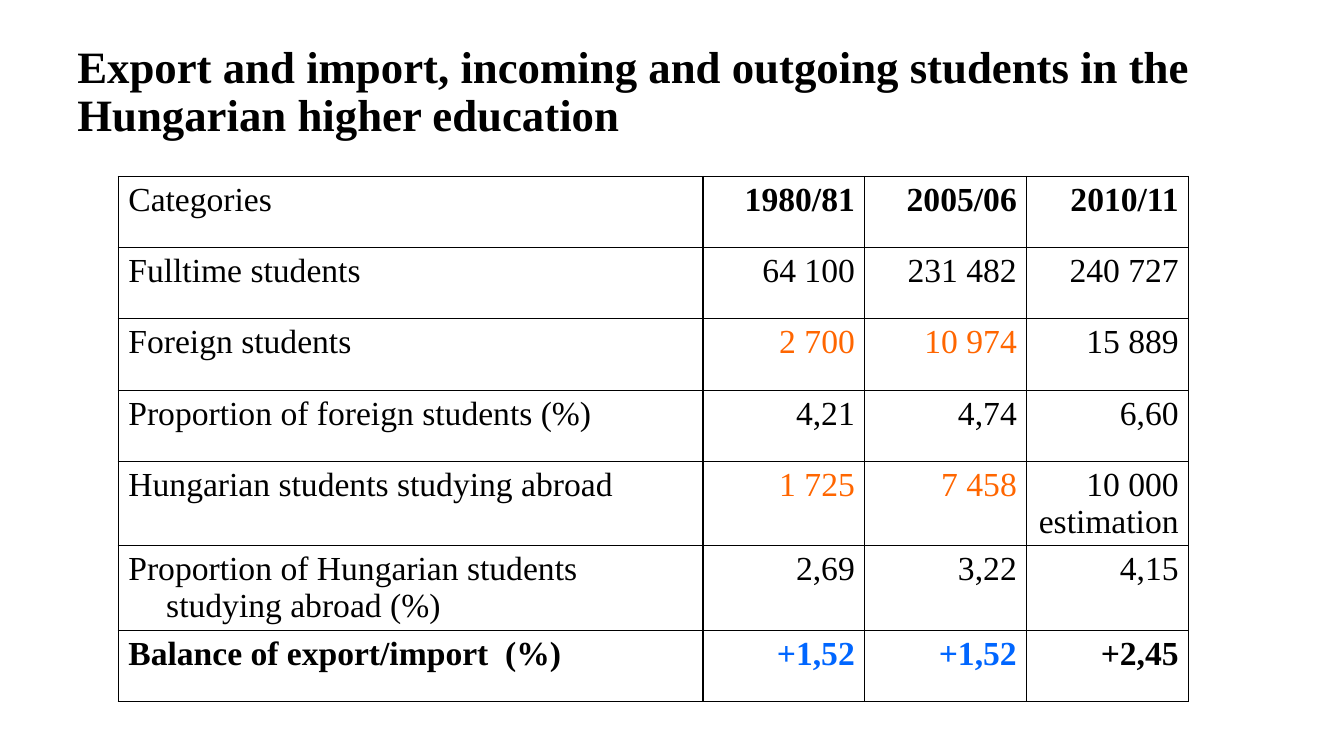
from pptx import Presentation
from pptx.dml.color import RGBColor
from pptx.enum.text import MSO_ANCHOR as Anchor, MSO_AUTO_SIZE as AutoSize, PP_ALIGN as Align
from pptx.oxml.xmlchemy import OxmlElement
from pptx.util import Pt

FONT = "Times New Roman"
BLACK, ORANGE, BLUE = "000000", "FF6600", "0066FF"
TITLE = "Export and import, incoming and outgoing students in the Hungarian higher education"
TITLE_BOX = (48, 21.6, 864, 90)
TABLE_BOX = (84.5, 126, 764.7, 356.3)
LABEL_WIDTH = 417.6
INDENT = 27

ROWS = [
    ("Categories", "1980/81", "2005/06", "2010/11"),
    ("Fulltime students", "64 100", "231 482", "240 727"),
    ("Foreign students", "2 700", "10 974", "15 889"),
    ("Proportion of foreign students (%)", "4,21", "4,74", "6,60"),
    ("Hungarian students studying abroad", "1 725", "7 458", "10 000\nestimation"),
    ("Proportion of Hungarian students studying abroad (%)", "2,69", "3,22", "4,15"),
    ("Balance of export/import  (%)", "+1,52", "+1,52", "+2,45"),
]
ROW_ACCENTS = {2: ORANGE, 4: ORANGE, 6: BLUE}  # first two years only
BALANCE_ROW = len(ROWS) - 1


def color(value):
    return RGBColor.from_string(value)


def add_text(para, text, size, bold, tint=BLACK):
    run = para.add_run()
    run.text = text
    font = run.font
    font.name, font.size, font.bold = FONT, Pt(size), bold
    font.color.rgb = color(tint)


def outline_cell(cell):
    properties = cell._tc.get_or_add_tcPr()
    for side in ("L", "R", "T", "B"):
        line = OxmlElement(f"a:ln{side}")
        line.set("w", str(Pt(1)))
        fill = OxmlElement("a:solidFill")
        ink = OxmlElement("a:srgbClr")
        ink.set("val", BLACK)
        fill.append(ink)
        line.append(fill)
        properties.append(line)
    cell.fill.background()


def fill_cell(cell, text, bold, tint, align):
    outline_cell(cell)
    frame = cell.text_frame
    for index, line in enumerate(text.split("\n")):
        para = frame.add_paragraph() if index else frame.paragraphs[0]
        para.alignment = align
        # Hanging indent
        properties = para._p.get_or_add_pPr()
        properties.set("marL", str(Pt(INDENT)))
        properties.set("indent", str(-Pt(INDENT)))
        add_text(para, line, 24, bold, tint)


def place_title(page, box):
    title = page.shapes.title
    title.left, title.top, title.width, title.height = map(Pt, box)
    frame = title.text_frame
    frame.auto_size = AutoSize.NONE
    frame.word_wrap = True
    frame.vertical_anchor = Anchor.MIDDLE
    para = frame.paragraphs[0]
    para.alignment = Align.LEFT
    para.line_spacing = 0.9
    add_text(para, TITLE, 32, True)


def place_table(page, box):
    left, top, width, height = box
    year_count = len(ROWS[0]) - 1
    table = page.shapes.add_table(len(ROWS), year_count + 1, *map(Pt, box)).table
    table.first_row = table.horz_banding = False

    # Column and row sizes
    year_width = (width - LABEL_WIDTH) / year_count
    for index, column in enumerate(table.columns):
        column.width = Pt(year_width if index else LABEL_WIDTH)
    for row in table.rows:
        row.height = Pt(height / len(ROWS))

    # Cell contents
    for row, texts in enumerate(ROWS):
        for col, text in enumerate(texts):
            bold = row == BALANCE_ROW or (row == 0 and col > 0)
            tint = ROW_ACCENTS.get(row, BLACK) if col in (1, 2) else BLACK
            align = Align.RIGHT if col else Align.LEFT
            fill_cell(table.cell(row, col), text, bold, tint, align)


def main():
    deck = Presentation()
    deck.slide_width, deck.slide_height = Pt(960), Pt(540)
    page = deck.slides.add_slide(deck.slide_layouts[5])
    place_title(page, TITLE_BOX)
    place_table(page, TABLE_BOX)
    deck.save("out.pptx")


if __name__ == "__main__":
    main()
